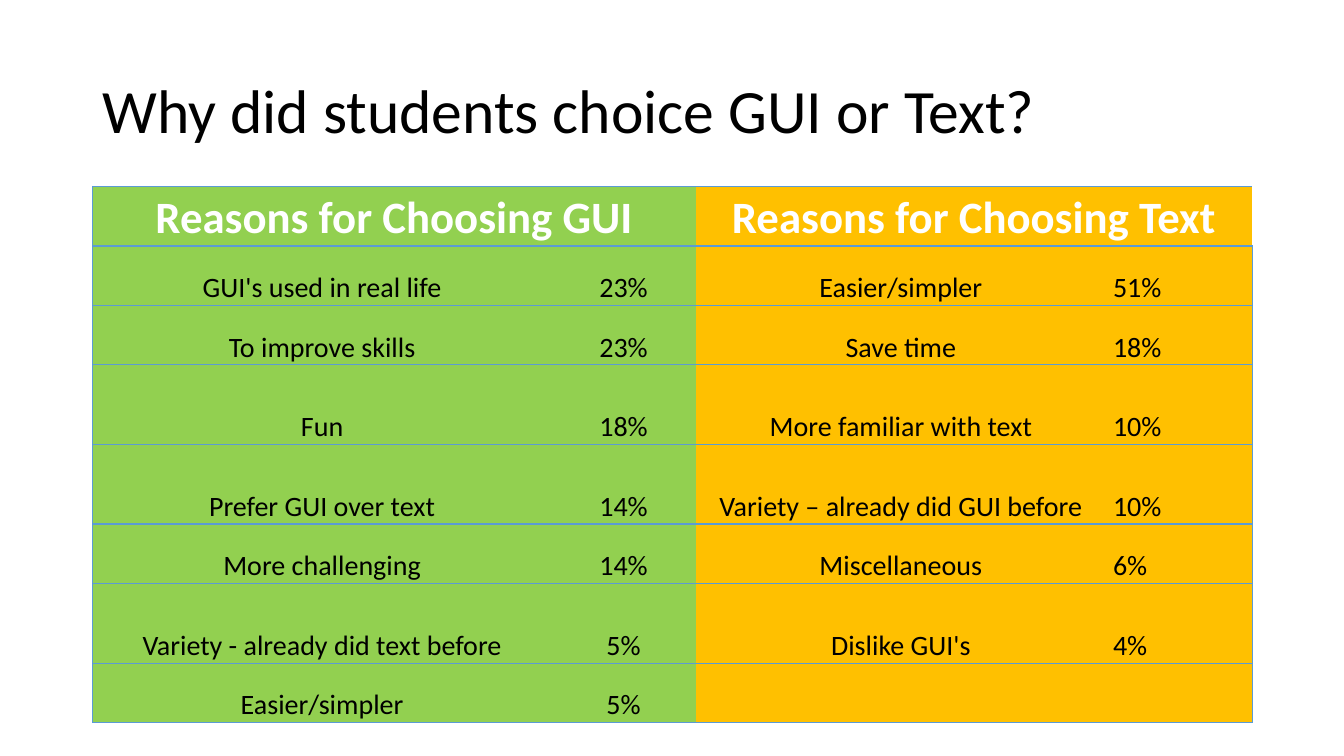
from dataclasses import dataclass

from lxml.etree import SubElement
from pptx import Presentation
from pptx.dml.color import RGBColor
from pptx.enum.text import MSO_ANCHOR, PP_ALIGN
from pptx.oxml.ns import qn
from pptx.util import Inches, Pt


@dataclass(frozen=True)
class Theme:
    font: str = "Calibri"
    ink: str = "000000"
    heading_ink: str = "FFFFFF"
    gui: str = "92D050"
    text: str = "FFC000"
    rule: str = "5B9BD5"
    title_size: int = 44
    heading_size: int = 32
    reason_size: int = 20


theme = Theme()


def write(frame, text, *, size, color=theme.ink, bold=False,
          align=PP_ALIGN.CENTER, anchor=MSO_ANCHOR.BOTTOM, spacing=None):
    frame.word_wrap = True
    frame.vertical_anchor = anchor
    paragraph = frame.paragraphs[0]
    paragraph.alignment = align
    paragraph.line_spacing = spacing
    run = paragraph.add_run()
    run.text = text
    run.font.name = theme.font
    run.font.size = Pt(size)
    run.font.bold = bold
    run.font.color.rgb = RGBColor.from_string(color)


def set_borders(cell, visible_sides):
    properties = cell._tc.get_or_add_tcPr()
    for side in "LRTB":
        line = SubElement(properties, qn(f"a:ln{side}"), w=str(Pt(1)))
        if side in visible_sides:
            fill = SubElement(line, qn("a:solidFill"))
            SubElement(fill, qn("a:srgbClr"), val=theme.rule)
        else:
            SubElement(line, qn("a:noFill"))


presentation = Presentation()
presentation.slide_width = Inches(13.33)
presentation.slide_height = Inches(7.5)
slide = presentation.slides.add_slide(presentation.slide_layouts[6])

# Title
title = slide.shapes.add_textbox(Inches(0.92), Inches(0.4), Inches(11.5), Inches(1.45))
write(title.text_frame, "Why did students choice GUI or Text?", size=theme.title_size,
      align=PP_ALIGN.LEFT, anchor=MSO_ANCHOR.MIDDLE, spacing=0.9)

# Reasons and their shares, GUI on the left and text on the right
reasons = [
    ("Reasons for Choosing GUI", "", "Reasons for Choosing Text", ""),
    ("GUI's used in real life", "23%", "Easier/simpler", "51%"),
    ("To improve skills", "23%", "Save time", "18%"),
    ("Fun", "18%", "More familiar with text", "10%"),
    ("Prefer GUI over text", "14%", "Variety – already did GUI before", "10%"),
    ("More challenging", "14%", "Miscellaneous", "6%"),
    ("Variety - already did text before", "5%", "Dislike GUI's", "4%"),
    ("Easier/simpler", "5%", "", ""),
]
column_widths = [4.55, 1.43, 4.07, 1.45]
row_heights = [0.59, 0.59, 0.59, 0.79, 0.79, 0.59, 0.79, 0.59]
column_fills = [theme.gui, theme.gui, theme.text, theme.text]
column_borders = ["LTB", "TB", "TB", "RTB"]

# Table grid
table = slide.shapes.add_table(
    len(reasons), len(column_widths), Inches(0.92), Inches(1.85),
    Inches(sum(column_widths)), Inches(sum(row_heights))).table
table.horz_banding = False
for column, width in zip(table.columns, column_widths):
    column.width = Inches(width)
for row, height in zip(table.rows, row_heights):
    row.height = Inches(height)
for start in (0, 2):
    table.cell(0, start).merge(table.cell(0, start + 1))

# Table cells
for row_index, entries in enumerate(reasons):
    if row_index == 0:
        style = dict(size=theme.heading_size, color=theme.heading_ink, bold=True)
    else:
        style = dict(size=theme.reason_size)
    for column_index, entry in enumerate(entries):
        cell = table.cell(row_index, column_index)
        set_borders(cell, column_borders[column_index])
        cell.fill.solid()
        cell.fill.fore_color.rgb = RGBColor.from_string(column_fills[column_index])
        cell.margin_left = cell.margin_right = Inches(0.07)
        cell.margin_top = cell.margin_bottom = 0
        cell.vertical_anchor = MSO_ANCHOR.BOTTOM
        if entry:
            align = PP_ALIGN.LEFT if column_index == 3 else PP_ALIGN.CENTER
            write(cell.text_frame, entry, align=align, anchor=None, **style)

presentation.save("out.pptx")
